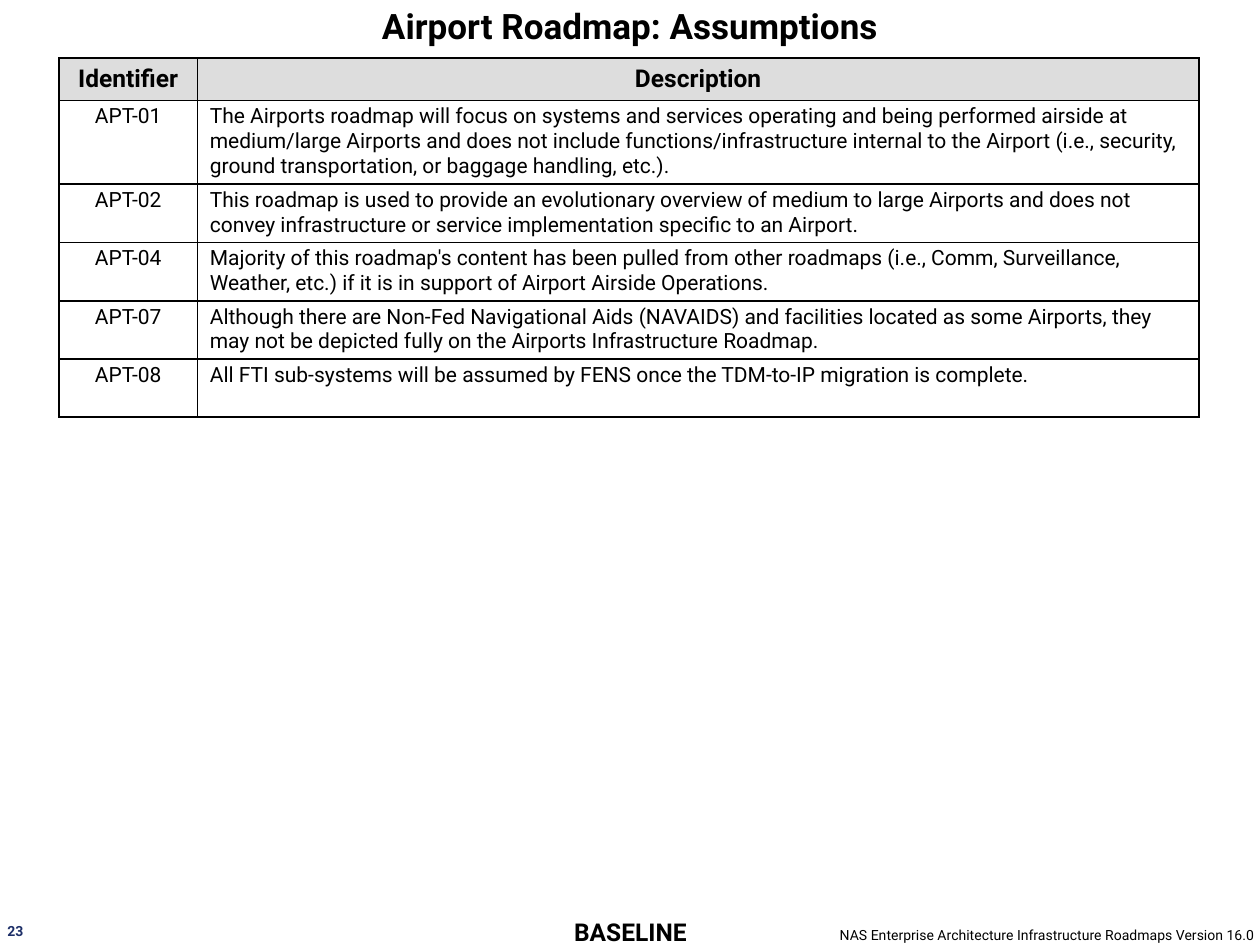
from lxml.etree import SubElement
from pptx import Presentation
from pptx.dml.color import RGBColor
from pptx.enum.text import MSO_ANCHOR, PP_ALIGN
from pptx.oxml.ns import qn
from pptx.util import Cm, Pt

COLORS = {"ink": "000000", "header": "DDDDDD", "page_number": "1D2F68"}
COLUMN_WIDTHS = (2.79, 20.19)
ROW_HEIGHTS = (0.84, 1.68, 1.17, 1.17, 1.17, 1.17)
ASSUMPTIONS = [
    ("Identifier", "Description"),
    ("APT-01", "The Airports roadmap will focus on systems and services operating and being "
               "performed airside at medium/large Airports and does not include "
               "functions/infrastructure internal to the Airport (i.e., security, ground "
               "transportation, or baggage handling, etc.)."),
    ("APT-02", "This roadmap is used to provide an evolutionary overview of medium to large "
               "Airports and does not convey infrastructure or service implementation "
               "specific to an Airport."),
    ("APT-04", "Majority of this roadmap's content has been pulled from other roadmaps (i.e., "
               "Comm, Surveillance, Weather, etc.) if it is in support of Airport Airside "
               "Operations."),
    ("APT-07", "Although there are Non-Fed Navigational Aids (NAVAIDS) and facilities located "
               "as some Airports, they may not be depicted fully on the Airports "
               "Infrastructure Roadmap."),
    ("APT-08", "All FTI sub-systems will be assumed by FENS once the TDM-to-IP migration is "
               "complete."),
]


class RoadmapSlide:
    """Holds the roadmap style and the slide being filled."""

    font = "Roboto"

    def __init__(self, presentation):
        self.slide = presentation.slides.add_slide(presentation.slide_layouts[5])

    def set_text(self, frame, text, size, bold=False, color="ink", align=PP_ALIGN.LEFT,
                 before=0):
        paragraph = frame.paragraphs[0]
        paragraph.alignment = align
        paragraph.space_before = Pt(before)
        run = paragraph.add_run()
        run.text = text
        for name, value in {"name": self.font, "size": Pt(size), "bold": bold}.items():
            setattr(run.font, name, value)
        run.font.color.rgb = RGBColor.from_string(COLORS[color])

    def place_title(self, text, left, top, width, height):
        title = self.slide.shapes.title
        position = {"left": left, "top": top, "width": width, "height": height}
        for name, value in position.items():
            setattr(title, name, Cm(value))
        title.text_frame.vertical_anchor = MSO_ANCHOR.MIDDLE
        self.set_text(title.text_frame, text, 20, True, align=PP_ALIGN.CENTER)

    def add_label(self, text, left, top, width, height, size, side=0, wrap=True,
                  anchor=MSO_ANCHOR.TOP, **style):
        label = self.slide.shapes.add_textbox(Cm(left), Cm(top), Cm(width), Cm(height))
        layout = {"margin_left": Cm(side), "margin_right": Cm(side), "margin_top": 0,
                  "margin_bottom": 0, "word_wrap": wrap, "vertical_anchor": anchor}
        for name, value in layout.items():
            setattr(label.text_frame, name, value)
        self.set_text(label.text_frame, text, size, **style)

    def outline_cell(self, cell):
        properties = cell._tc.get_or_add_tcPr()
        for index, side in enumerate(("lnL", "lnR", "lnT", "lnB")):
            border = SubElement(properties, qn(f"a:{side}"), w=str(Pt(1)))
            fill = SubElement(border, qn("a:solidFill"))
            SubElement(fill, qn("a:srgbClr"), val=COLORS["ink"])
            properties.insert(index, border)

    def add_table(self, rows, left, top, widths, heights):
        table = self.slide.shapes.add_table(
            len(rows), len(widths), Cm(left), Cm(top), Cm(sum(widths)), Cm(sum(heights))).table
        table.horz_banding = False
        for column, width in zip(table.columns, widths):
            column.width = Cm(width)
        for row, height in zip(table.rows, heights):
            row.height = Cm(height)
        for row_index, texts in enumerate(rows):
            header = row_index == 0
            for column_index, text in enumerate(texts):
                cell = table.cell(row_index, column_index)
                padding = Cm(0.13 if header else 0.08)
                margins = {"margin_left": Cm(0.25), "margin_right": Cm(0.25),
                           "margin_top": padding, "margin_bottom": padding}
                for name, value in margins.items():
                    setattr(cell, name, value)
                if header:
                    cell.fill.solid()
                    cell.fill.fore_color.rgb = RGBColor.from_string(COLORS["header"])
                else:
                    cell.fill.background()
                self.outline_cell(cell)
                centred = header or column_index == 0
                self.set_text(cell.text_frame, text, 14 if header else 12, header,
                              align=PP_ALIGN.CENTER if centred else PP_ALIGN.LEFT,
                              before=0 if centred else 2)


def main():
    presentation = Presentation()
    presentation.slide_width, presentation.slide_height = Cm(25.4), Cm(19.05)
    roadmap = RoadmapSlide(presentation)
    roadmap.add_label("NAS Enterprise Architecture Infrastructure Roadmaps Version 16.0",
                      16, 18.67, 9.35, 0.33, 8, side=0.05, align=PP_ALIGN.RIGHT)
    roadmap.add_label("BASELINE", 10.74, 18.47, 3.94, 0.61, 14, anchor=MSO_ANCHOR.MIDDLE,
                      bold=True, align=PP_ALIGN.CENTER)
    roadmap.place_title("Airport Roadmap: Assumptions", 0, 0, 25.4, 1.02)
    roadmap.add_table(ASSUMPTIONS, 1.19, 1.17, COLUMN_WIDTHS, ROW_HEIGHTS)
    roadmap.add_label("23", 0.15, 18.59, 0.36, 0.33, 8, wrap=False, bold=True,
                      color="page_number")
    presentation.save("out.pptx")


if __name__ == "__main__":
    main()
